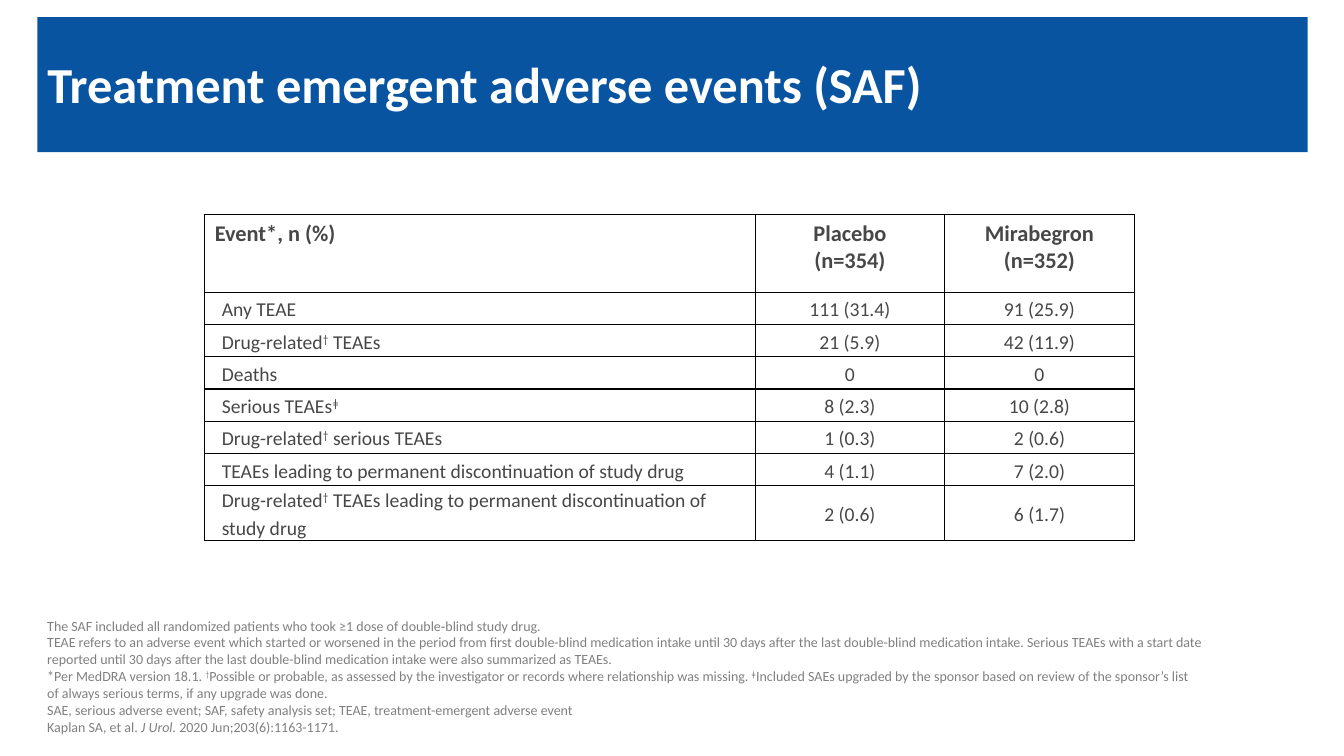
from lxml import etree
from pptx import Presentation
from pptx import util as u
from pptx.dml import color
from pptx.enum import shapes, text
from pptx.oxml import ns

Inches, Pt = u.Inches, u.Pt
COLORS = {"bar": "0954A0", "title": "FFFFFF", "table": "474747",
          "note": "808080", "border": "000000", "cell": "FFFFFF"}


def add_runs(p, parts, size, key, bold=False):
    for part in parts:
        r = p.add_run()
        r.text = part
        r.font.name = "Calibri"
        r.font.size = Pt(size)
        r.font.bold = bold
        r.font.italic = True if part == "J Urol. " else None
        r.font.color.rgb = color.RGBColor.from_string(COLORS[key])
        if part in ("†", "ǂ"):
            r._r.get_or_add_rPr().set("baseline", "30000")


def format_cell(cell, margin_x, margin_y):
    cell.margin_left = cell.margin_right = Inches(margin_x)
    cell.margin_top = cell.margin_bottom = Inches(margin_y)
    tcPr = cell._tc.get_or_add_tcPr()
    for side in ("lnL", "lnR", "lnT", "lnB"):
        ln = etree.SubElement(tcPr, ns.qn("a:" + side), w=str(Pt(1)))
        fill = etree.SubElement(ln, ns.qn("a:solidFill"))
        etree.SubElement(fill, ns.qn("a:srgbClr"), val=COLORS["border"])
    cell.fill.solid()
    cell.fill.fore_color.rgb = color.RGBColor.from_string(COLORS["cell"])


prs = Presentation()
prs.slide_width, prs.slide_height = Inches(13.33), Inches(7.5)
s = prs.slides.add_slide(prs.slide_layouts[5])

bar = s.shapes.add_shape(shapes.MSO_SHAPE.RECTANGLE, Inches(0.37), Inches(0.17),
                         Inches(12.6), Inches(1.34))
bar.shadow.inherit = False
bar.fill.solid()
bar.fill.fore_color.rgb = color.RGBColor.from_string(COLORS["bar"])
bar.line.fill.background()
s.shapes._spTree.insert(2, bar._element)

title = s.shapes.title
title.left, title.top = Inches(0.37), Inches(0.49)
title.width, title.height = Inches(11.97), Inches(0.75)
tf = title.text_frame
tf.vertical_anchor = text.MSO_ANCHOR.MIDDLE
p = tf.paragraphs[0]
p.alignment = text.PP_ALIGN.LEFT
p.line_spacing = 0.9
add_runs(p, ["Treatment emergent adverse events (SAF)"], 36, "title", True)

headers = [["Event*, n (%)"], ["Placebo", "(n=354)"], ["Mirabegron", "(n=352)"]]
events = [
    (["Any TEAE"], "111 (31.4)", "91 (25.9)"),
    (["Drug-related", "†", " TEAEs"], "21 (5.9)", "42 (11.9)"),
    (["Deaths"], "0", "0"),
    (["Serious TEAEs", "ǂ"], "8 (2.3)", "10 (2.8)"),
    (["Drug-related", "†", " serious TEAEs"], "1 (0.3)", "2 (0.6)"),
    (["TEAEs leading to permanent discontinuation of study drug"], "4 (1.1)", "7 (2.0)"),
    (["Drug-related", "†", " TEAEs leading to permanent discontinuation of study drug"],
     "2 (0.6)", "6 (1.7)"),
]
table = s.shapes.add_table(len(events) + 1, 3, Inches(2.03), Inches(2.13),
                           Inches(9.22), Inches(3.01)).table
table.first_row = table.horz_banding = False
for col, width in zip(table.columns, (5.46, 1.88, 1.88)):
    col.width = Inches(width)
for i, row in enumerate(table.rows):
    row.height = Inches(0.32 if i else 0.77)

for j, lines in enumerate(headers):
    cell = table.cell(0, j)
    format_cell(cell, 0.1, 0.05)
    for k, line in enumerate(lines):
        p = cell.text_frame.paragraphs[0] if k == 0 else cell.text_frame.add_paragraph()
        p.alignment = text.PP_ALIGN.CENTER if j else text.PP_ALIGN.LEFT
        add_runs(p, [line], 16, "table", True)

for i, (label, placebo, mirabegron) in enumerate(events, 1):
    for j, parts in enumerate((label, [placebo], [mirabegron])):
        cell = table.cell(i, j)
        format_cell(cell, 0.07, 0)
        cell.vertical_anchor = text.MSO_ANCHOR.MIDDLE
        p = cell.text_frame.paragraphs[0]
        p.line_spacing = 1.15
        if j:
            p.alignment = text.PP_ALIGN.CENTER
        else:
            p._p.get_or_add_pPr().set("marL", str(Inches(0.1)))
        add_runs(p, parts, 14, "table")

notes = [
    ["The SAF included all randomized patients who took ≥1 dose of double‑blind study drug."],
    ["TEAE refers to an adverse event which started or worsened in the period from first "
     "double-blind medication intake until 30 days after the last double-blind medication "
     "intake. Serious TEAEs with a start date reported until 30 days after the last "
     "double-blind medication intake were also summarized as TEAEs."],
    ["*Per MedDRA version 18.1. ", "†",
     "Possible or probable, as assessed by the investigator or records where relationship "
     "was missing. ", "ǂ",
     "Included SAEs upgraded by the sponsor based on review of the sponsor’s list of always "
     "serious terms, if any upgrade was done."],
    ["SAE, serious adverse event; SAF, safety analysis set; TEAE, treatment-emergent "
     "adverse event"],
    ["Kaplan SA, et al. ", "J Urol. ", "2020 Jun;203(6):1163-1171."],
]
sp = s.shapes.add_textbox(Inches(0.37), Inches(6.11), Inches(11.65), Inches(1.23))
tf = sp.text_frame
tf.word_wrap = True
tf.vertical_anchor = text.MSO_ANCHOR.BOTTOM
for k, parts in enumerate(notes):
    p = tf.paragraphs[0] if k == 0 else tf.add_paragraph()
    add_runs(p, parts, 10, "note")

prs.save("out.pptx")
